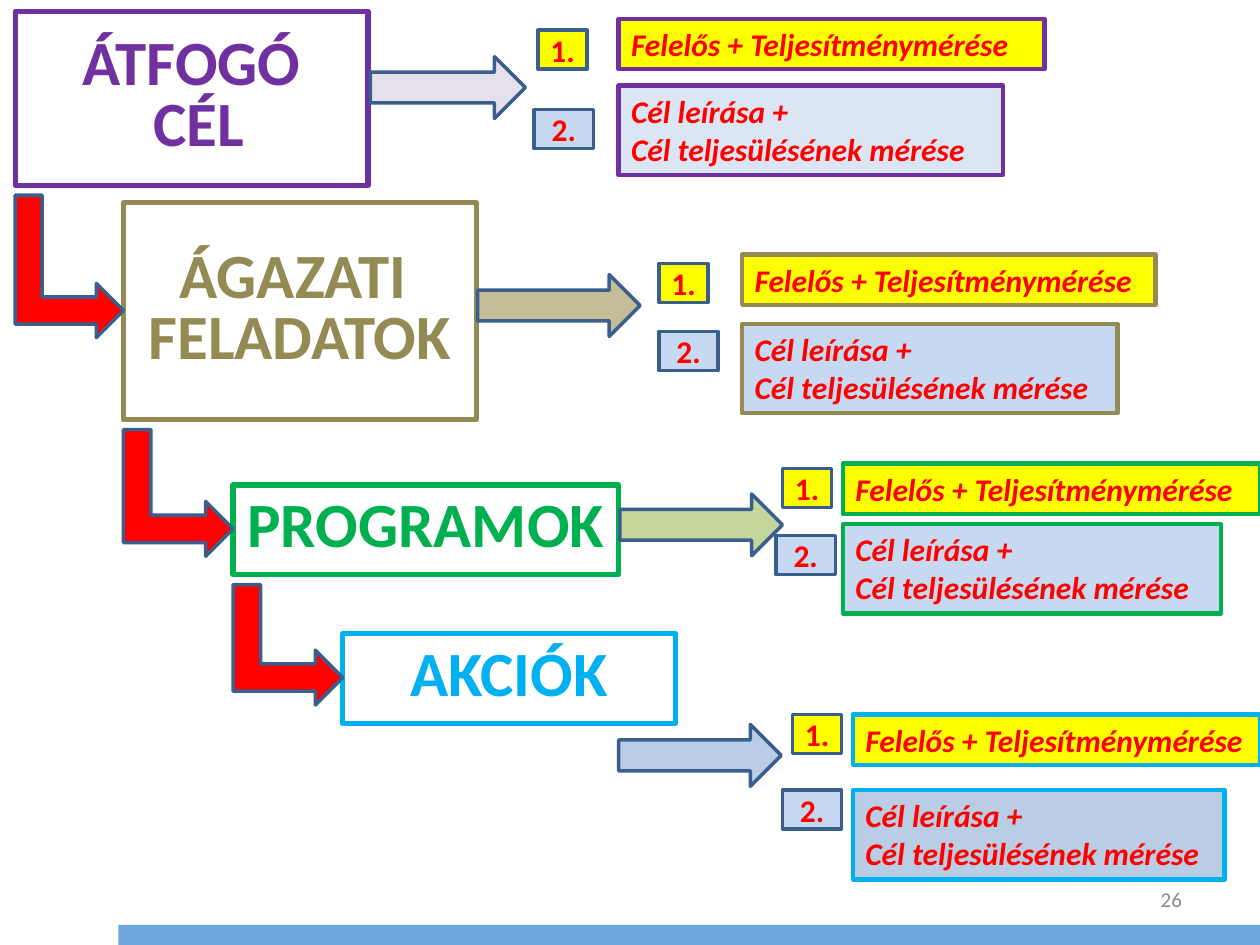
from collections import namedtuple
from pptx import Presentation
from pptx.dml.color import RGBColor as RGB
from pptx.enum.shapes import MSO_SHAPE as Shape
from pptx.enum.text import MSO_ANCHOR as Anchor, MSO_AUTO_SIZE as Fit, PP_ALIGN as Align
from pptx.util import Inches, Pt

UNIT = Inches(0.1)  # grid of 100 columns by 75 rows
COLS, ROWS = 100, 75

RED = RGB(0xFF, 0x00, 0x00)
YELLOW = RGB(0xFF, 0xFF, 0x00)
NAVY = RGB(0x3A, 0x5F, 0x8C)
PALE = RGB(0xC6, 0xD9, 0xF1)
ICE = RGB(0xDC, 0xE6, 0xF2)
STEEL = RGB(0xB9, 0xCD, 0xE5)
LILAC = RGB(0xE6, 0xE0, 0xEC)
SAND = RGB(0xC4, 0xBD, 0x97)
LIME = RGB(0xC3, 0xD6, 0x9B)
PURPLE = RGB(0x70, 0x30, 0xA0)
OLIVE = RGB(0x94, 0x8A, 0x54)
GREEN = RGB(0x00, 0xB0, 0x50)
SKY = RGB(0x00, 0xB0, 0xF0)
BAR = RGB(0x6C, 0xA8, 0xDE)
GREY = RGB(0x8C, 0x8C, 0x8C)

OWNER = "Felelős + Teljesítménymérése"
DETAIL = "Cél leírása + \nCél teljesülésének mérése"
TAG = {"size": Pt(18), "bold": True}
NOTE = {**TAG, "italic": True}
GOAL = {"size": Pt(36), "bold": True}

Box = namedtuple("Box", "x y w h")
# side: box of the two notes; widths: of each note; drop: second note's offset
# tags: offsets of the two number tags from the side box's corner
Level = namedtuple("Level", "text color box arrow tint side widths drop tags fill")

LEVELS = [
    Level("ÁTFOGÓ\n CÉL", PURPLE, Box(1.2, 0.9, 28, 13.8), Box(29.4, 4.5, 12.3, 4.9),
          LILAC, (49.1, 1.5), (33.8, 30.5), 5.3, ((-6.4, 0.9), (-6.7, 7.2)), ICE),
    Level("ÁGAZATI \nFELADATOK", OLIVE, Box(9.8, 16.1, 28, 17.2), Box(37.9, 21.8, 12.9, 4.9),
          SAND, (58.9, 20.2), (32.8, 29.8), 5.5, ((-6.6, 0.7), (-6.6, 6.1)), PALE),
    Level("PROGRAMOK", GREEN, Box(18.5, 38.5, 30.6, 7.1), Box(49.2, 39.2, 12.9, 4.9),
          LIME, (66.9, 36.8), (33.1, 30), 4.8, ((-4.8, 0.4), (-5.3, 5.7)), PALE),
    Level("AKCIÓK", SKY, Box(27.2, 50.3, 26.4, 7.1), Box(49.1, 57.5, 12.9, 4.9),
          STEEL, (67.7, 56.7), (32.3, 29.5), 6, ((-4.8, 0), (-5.6, 6)), STEEL),
]


def place(shape, box):
    shape.left, shape.top, shape.width, shape.height = (round(v * UNIT) for v in box)


def paint(shape, fill, line, width):
    if fill is None:
        shape.fill.background()
    else:
        shape.fill.solid()
        shape.fill.fore_color.rgb = fill
    if line is None:
        shape.line.fill.background()
    else:
        shape.line.color.rgb = line
        shape.line.width = Pt(width)


def draw(slide, kind, box, fill=None, line=None, width=2):
    shape = slide.shapes.add_shape(kind, 0, 0, 0, 0)
    shape.shadow.inherit = False
    place(shape, box)
    paint(shape, fill, line, width)
    return shape


def write(shape, text, style, color, align=Align.CENTER, anchor=Anchor.MIDDLE,
          fit=Fit.NONE, lead=None):
    frame = shape.text_frame
    frame.word_wrap, frame.vertical_anchor, frame.auto_size = True, anchor, fit
    para = frame.paragraphs[0]
    para.text, para.alignment = text, align
    if lead:
        para.line_spacing = lead
    for run in para.runs:
        for key, value in {"name": "Calibri", **style}.items():
            setattr(run.font, key, value)
        run.font.color.rgb = color


def add_goal(slide, level, title=None):
    """Draw the goal box, in the title placeholder when one is given."""
    shape = title or draw(slide, Shape.RECTANGLE, level.box)
    place(shape, level.box)
    paint(shape, None, level.color, 3)
    write(shape, level.text, GOAL, level.color, lead=Pt(35))


def add_step(slide, start, end):
    """Join the foot of one goal to the left side of the next."""
    wide = end.x - start.x
    top = start.y + start.h + 0.8
    tall = end.y + end.h / 2 + 2.1 - top
    # The preset points up, so its frame is turned about its centre
    box = Box(start.x + (wide - tall) / 2, top + (tall - wide) / 2, tall, wide)
    draw(slide, Shape.BENT_UP_ARROW, box, RED, NAVY).rotation = 90


def add_side(slide, level):
    """Draw the arrow, notes and number tags beside a goal."""
    x, y = level.side
    draw(slide, Shape.RIGHT_ARROW, level.arrow, level.tint, NAVY)
    notes = zip((OWNER, DETAIL), level.widths, (0, level.drop), (4, 7.1),
                (YELLOW, level.fill))
    for text, wide, drop, tall, fill in notes:
        note = draw(slide, Shape.RECTANGLE, Box(x, y + drop, wide, tall),
                    fill, level.color, 2.5)
        write(note, text, NOTE, RED, Align.LEFT, Anchor.TOP, Fit.SHAPE_TO_FIT_TEXT)
    tags = zip(("1.", "2."), level.tags, (3.9, 4.7), (YELLOW, PALE))
    for text, (dx, dy), wide, fill in tags:
        tag = draw(slide, Shape.RECTANGLE, Box(x + dx, y + dy, wide, 3.1), fill, NAVY)
        write(tag, text, TAG, RED)


def add_footer(slide):
    draw(slide, Shape.RECTANGLE, Box(9.4, ROWS - 1.6, COLS - 9.4, 1.6), BAR)
    number = slide.shapes.add_textbox(0, 0, 0, 0)
    place(number, Box(71.5, 69.4, 23.3, 4))
    write(number, "26", {"size": Pt(12)}, GREY, Align.RIGHT)


def main():
    deck = Presentation()
    deck.slide_width, deck.slide_height = COLS * UNIT, ROWS * UNIT
    slide = deck.slides.add_slide(deck.slide_layouts[5])
    add_footer(slide)
    add_goal(slide, LEVELS[0], slide.shapes.title)
    for level in LEVELS[1:]:
        add_goal(slide, level)
    for upper, lower in zip(LEVELS, LEVELS[1:]):
        add_step(slide, upper.box, lower.box)
    for level in LEVELS:
        add_side(slide, level)
    deck.save("out.pptx")


if __name__ == "__main__":
    main()
